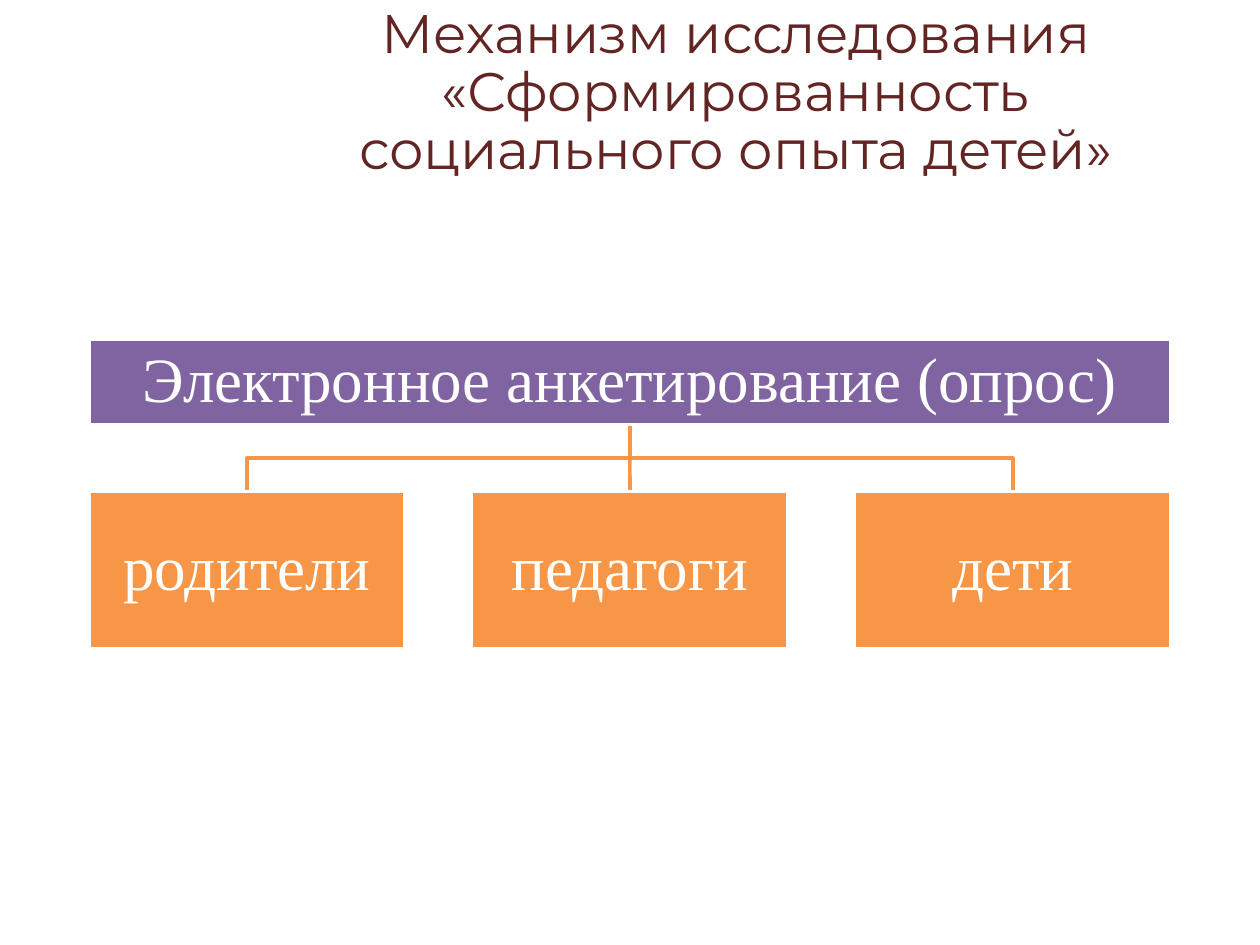
from lxml import etree
from pptx import Presentation
from pptx.dml.color import RGBColor
from pptx.enum import shapes, text
from pptx.oxml import ns
from pptx.util import Cm, Pt


def color(value):
    return RGBColor.from_string(value)


class Diagram:
    title_font = "Montserrat"
    box_font = "Times New Roman"
    title_color = "632523"
    header_fill = "8064A2"
    accent = "F79646"
    white = "FFFFFF"
    line_width = Pt(2)

    def __init__(self, slide):
        self.s = slide

    def style_text(self, tf, words, font, size, font_color, spacing):
        tf.text = words
        tf.word_wrap = True
        tf.auto_size = text.MSO_AUTO_SIZE.NONE
        tf.vertical_anchor = text.MSO_ANCHOR.MIDDLE
        p = tf.paragraphs[0]
        p.alignment = text.PP_ALIGN.CENTER
        p.line_spacing = spacing
        p.space_before = Pt(0)
        r = p.runs[0]
        r.font.name = font
        r.font.size = Pt(size)
        r.font.color.rgb = color(font_color)

    def style_line(self, line, line_color):
        line.color.rgb = color(line_color)
        line.width = self.line_width

    def title(self, words, x, y, w, h):
        sp = self.s.shapes.title
        sp.left, sp.top, sp.width, sp.height = Cm(x), Cm(y), Cm(w), Cm(h)
        self.style_text(sp.text_frame, words, self.title_font, 31, self.title_color, Pt(33))

    def box(self, words, x, y, w, h, fill):
        sp = self.s.shapes.add_shape(shapes.MSO_SHAPE.RECTANGLE, Cm(x), Cm(y), Cm(w), Cm(h))
        sp.shadow.inherit = False
        sp.fill.solid()
        sp.fill.fore_color.rgb = color(fill)
        self.style_line(sp.line, self.white)
        tf = sp.text_frame
        tf.margin_left = tf.margin_right = tf.margin_top = tf.margin_bottom = Cm(0.08)
        self.style_text(tf, words, self.box_font, 36, self.white, 0.9)
        return sp

    def branch(self, points):
        start, *rest = [(Cm(x), Cm(y)) for x, y in points]
        builder = self.s.shapes.build_freeform(*start)
        builder.add_line_segments(rest, close=False)
        sp = builder.convert_to_shape()
        sp.shadow.inherit = False
        sp.fill.background()
        self.style_line(sp.line, self.accent)

    def connector(self, x, top, bottom):
        c = self.s.shapes.add_connector(
            shapes.MSO_CONNECTOR.STRAIGHT, Cm(x), Cm(top), Cm(x), Cm(bottom))
        self.style_line(c.line, self.accent)
        etree.SubElement(c._element.spPr, ns.qn("a:effectLst"))
        return c


def main():
    prs = Presentation()
    prs.slide_width, prs.slide_height = Cm(25.4), Cm(19.05)
    s = prs.slides.add_slide(prs.slide_layouts[0])
    subtitle = s.placeholders[1]._element
    subtitle.getparent().remove(subtitle)

    d = Diagram(s)
    d.title("Механизм исследования «Сформированность социального опыта детей»",
            6.15, 0.79, 17.35, 2.18)

    center, pitch = 12.7, 7.72
    header_top, header_width, header_height = 6.83, 21.8, 1.73
    group_top, group_width, group_height = 9.91, 6.38, 3.18
    header_bottom = header_top + header_height
    middle = (header_bottom + group_top) / 2

    for x in (center + pitch, center - pitch):
        d.branch([(center, header_bottom), (center, middle), (x, middle), (x, group_top)])
    stem = d.connector(center, header_bottom, group_top)

    header = d.box("Электронное анкетирование (опрос)", center - header_width / 2,
                   header_top, header_width, header_height, d.header_fill)
    groups = [
        d.box(name, center + (i - 1) * pitch - group_width / 2,
              group_top, group_width, group_height, d.accent)
        for i, name in enumerate(("родители", "педагоги", "дети"))
    ]
    stem.begin_connect(header, 2)
    stem.end_connect(groups[1], 0)

    prs.save("out.pptx")


if __name__ == "__main__":
    main()
